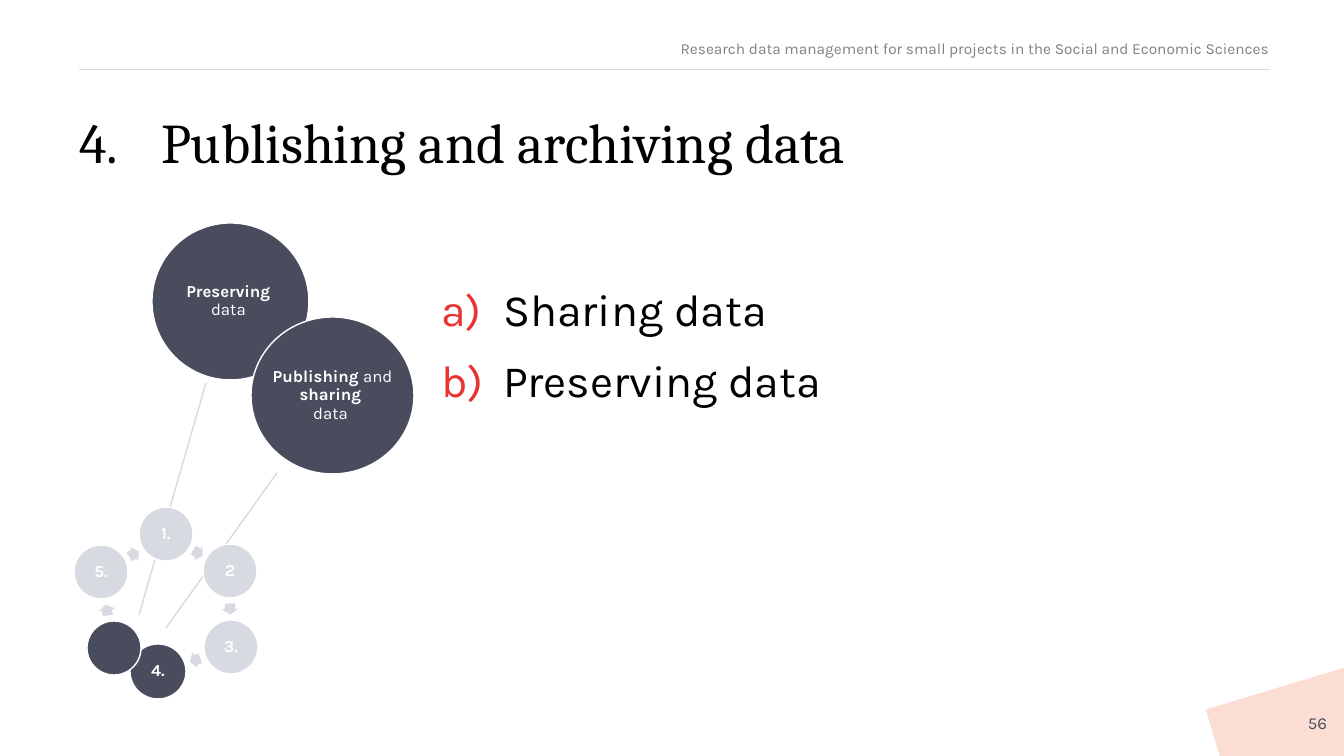
"""Build the section slide on publishing and archiving research data."""
import pptx
import pptx.dml.color
import pptx.enum.shapes
import pptx.enum.text
import pptx.oxml.ns
import pptx.util
from lxml import etree

PX = 914400 / 100.8
NAVY, PALE, WHITE = "494C5D", "D8DAE1", "FFFFFF"
SHAPE = pptx.enum.shapes.MSO_SHAPE
ALIGN = pptx.enum.text.PP_ALIGN
ANCHOR = pptx.enum.text.MSO_ANCHOR
qn = pptx.oxml.ns.qn


def px(*lengths):
    return [pptx.util.Emu(round(length * PX)) for length in lengths]


def rgb(value):
    return pptx.dml.color.RGBColor.from_string(value)


deck = pptx.Presentation()
deck.slide_width, deck.slide_height = px(1344, 756)
slide = deck.slides.add_slide(deck.slide_layouts[5])
shapes = slide.shapes

corner = shapes.add_shape(SHAPE.RECTANGLE, *px(1216, 686, 149, 93))
corner.rotation = 343.2
corner.shadow.inherit = False
corner.fill.solid()
corner.fill.fore_color.rgb = rgb("FCDDD3")
corner.line.fill.background()

for ends, color, weight in [
    ((79, 69, 1270, 69), "D9D9D9", 0.5),
    ((206, 383, 139, 615), PALE, 1),
    ((277, 473, 166, 628), PALE, 1),
]:
    rule = shapes.add_connector(pptx.enum.shapes.MSO_CONNECTOR.STRAIGHT, *px(*ends))
    rule.line.color.rgb = rgb(color)
    rule.line.width = pptx.util.Pt(weight)
    etree.SubElement(rule._element.spPr, qn("a:effectLst"))

for center_x, center_y, angle in [
    (198, 553, 30.2), (230, 609, 88.8), (195, 660, 161.7), (107, 610, 260.4), (134, 554, 330),
]:
    arrow = shapes.add_shape(SHAPE.RIGHT_ARROW, *px(center_x - 5.5, center_y - 8.5, 11, 17))
    arrow.adjustments[0], arrow.adjustments[1] = 0.6, 0.5
    arrow.rotation = angle
    arrow.shadow.inherit = False
    arrow.fill.solid()
    arrow.fill.fore_color.rgb = rgb(PALE)
    arrow.line.fill.background()

for box, color, words in [
    ((139, 507, 54, 54), PALE, [("1.", True)]),
    ((203, 544, 54, 54), PALE, [("2", True)]),
    ((204, 620, 54, 54), PALE, [("3.", True)]),
    ((130, 644, 56, 55), NAVY, [("4.", True)]),
    ((87, 621, 54, 54), NAVY, []),
    ((74, 545, 54, 54), PALE, [("5.", True)]),
    ((152, 223, 157, 157), NAVY, [("Preserving \v", True), ("data ", False)]),
    ((251, 317, 163, 157), NAVY,
     [("Publishing ", True), ("and ", False), ("sharing \v", True), ("data ", False)]),
]:
    circle = shapes.add_shape(SHAPE.OVAL, *px(*box))
    circle.shadow.inherit = False
    circle.fill.solid()
    circle.fill.fore_color.rgb = rgb(color)
    circle.line.color.rgb = rgb(WHITE)
    circle.line.width = pptx.util.Pt(1)
    frame = circle.text_frame
    frame.margin_left, frame.margin_right, frame.margin_top, frame.margin_bottom = px(-6, -6, 0, 0)
    frame.vertical_anchor = ANCHOR.MIDDLE
    label = frame.paragraphs[0]
    label.alignment = ALIGN.CENTER
    label.line_spacing = 0.9
    for word, bold in words:
        run = label.add_run()
        run.text = word.rstrip("\v")
        run.font.bold = bold
        run.font.name = "Karla"
        run.font.size = pptx.util.Pt(12)
        run.font.color.rgb = rgb(WHITE)
        if word.endswith("\v"):
            label.add_line_break()
            label._p.findall(qn("a:br"))[-1].get_or_add_rPr().set("sz", "1200")

title = shapes.title
title.left, title.top, title.width, title.height = px(79, 115, 1190, 70)
header = shapes.add_textbox(*px(289, 0, 981, 58))
agenda = shapes.add_textbox(*px(436, 282, 834, 427))
number = shapes.add_textbox(*px(1267, 708, 60, 30))

for box, lines, anchor, align, size, face, color, spacing, bullet in [
    (title, ["Publishing and archiving data"], ANCHOR.TOP, ALIGN.LEFT, 40, "Cambria", "000000", 0.9,
     (82, -82, "000000", {"type": "arabicPeriod", "startAt": "4"})),
    (header, ["Research data management for small projects in the Social and Economic Sciences"],
     ANCHOR.BOTTOM, ALIGN.RIGHT, 11, "Karla", "808080", 1, None),
    (agenda, ["Sharing data", "Preserving data"], ANCHOR.TOP, ALIGN.LEFT, 32, "Karla", "000000", 1,
     (67, -62, "E73331", {"type": "alphaLcParenR"})),
    (number, ["56"], ANCHOR.MIDDLE, ALIGN.RIGHT, 12, "Karla", NAVY, 1, None),
]:
    frame = box.text_frame
    for name, value in {
        "word_wrap": True, "auto_size": pptx.enum.text.MSO_AUTO_SIZE.NONE, "vertical_anchor": anchor,
        "margin_left": 0, "margin_right": 0, "margin_top": 0, "margin_bottom": 0,
    }.items():
        setattr(frame, name, value)
    for index, line in enumerate(lines):
        paragraph = frame.add_paragraph() if index else frame.paragraphs[0]
        paragraph.alignment = align
        paragraph.line_spacing = spacing
        paragraph.space_after = pptx.util.Pt(12 if box is agenda else 0)
        if bullet:
            margin, indent, bullet_color, numbering = bullet
            properties = paragraph._p.get_or_add_pPr()
            for key, length in zip(("marL", "indent"), px(margin, indent)):
                properties.set(key, str(length))
            tint = etree.SubElement(properties, qn("a:buClr"))
            etree.SubElement(tint, qn("a:srgbClr"), val=bullet_color)
            etree.SubElement(properties, qn("a:buFont"), typeface="Karla")
            etree.SubElement(properties, qn("a:buAutoNum"), numbering)
        run = paragraph.add_run()
        run.text = line
        run.font.name = face
        run.font.size = pptx.util.Pt(size)
        run.font.color.rgb = rgb(color)

deck.save("out.pptx")
